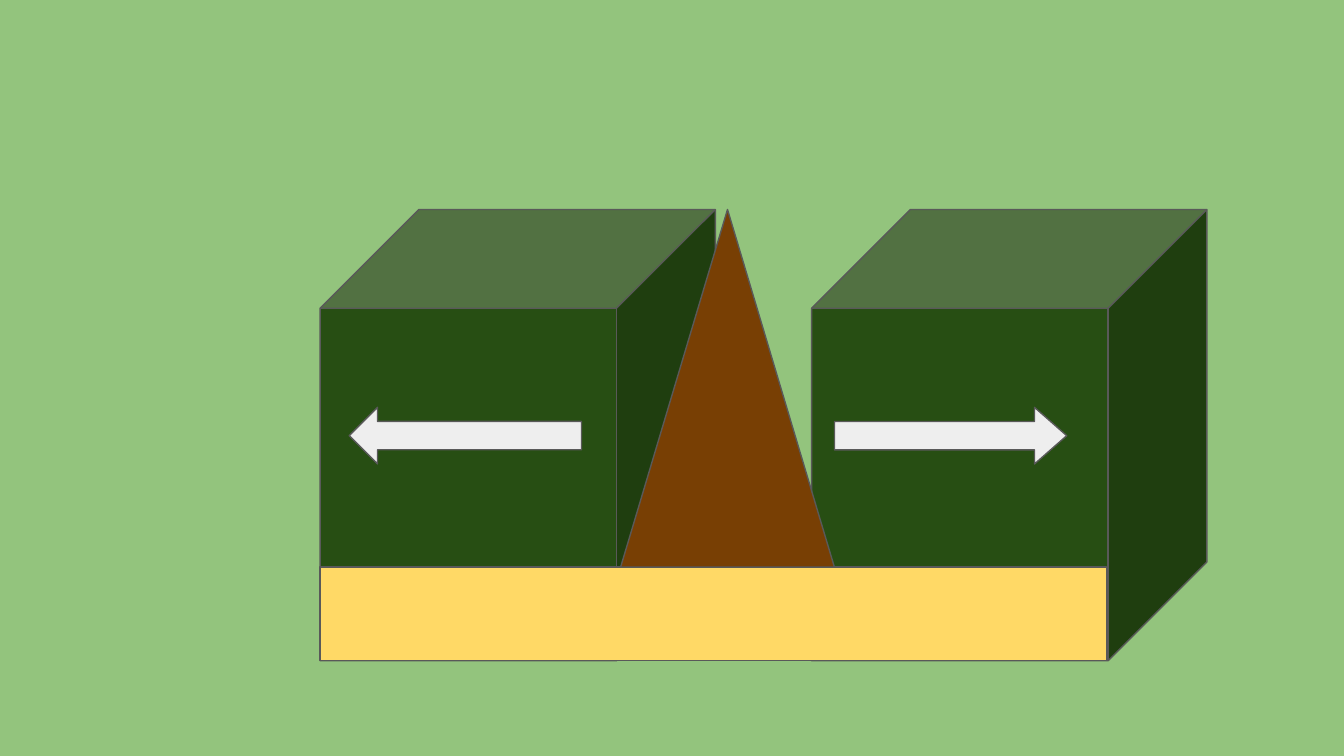
from pptx import Presentation
from pptx.dml.color import RGBColor
from pptx.enum.shapes import MSO_SHAPE as Preset
from pptx.util import Cm, Pt

BACKGROUND = RGBColor(0x93, 0xC4, 0x7D)
BLOCK_GREEN = RGBColor(0x27, 0x4E, 0x13)
ARROW_GREY = RGBColor(0xEE, 0xEE, 0xEE)
BASE_YELLOW = RGBColor(0xFF, 0xD9, 0x66)
WEDGE_BROWN = RGBColor(0x78, 0x3F, 0x04)
OUTLINE = RGBColor(0x59, 0x59, 0x59)

BLOCK_LEFT, BLOCK_TOP = 6.05, 3.96
BLOCK_WIDTH, BLOCK_HEIGHT = 7.47, 8.53
BLOCK_STEP = 9.29
BASE_TOP = 10.72
BASE_WIDTH = 14.86
ARROW_TOP = 7.7


def add_solid(slide, preset, left, top, width, height, color, adjustments=()):
    """Add an outlined preset shape; lengths are in centimetres."""
    shape = slide.shapes.add_shape(preset, Cm(left), Cm(top), Cm(width), Cm(height))
    for index, value in enumerate(adjustments):
        shape.adjustments[index] = value
    shape.shadow.inherit = False
    shape.fill.solid()
    shape.fill.fore_color.rgb = color
    shape.line.color.rgb = OUTLINE
    shape.line.width = Pt(0.75)
    return shape


def add_block(slide, left):
    add_solid(slide, Preset.CUBE, left, BLOCK_TOP, BLOCK_WIDTH, BLOCK_HEIGHT,
              BLOCK_GREEN, [0.25])


def add_arrow(slide, left, head_length, rotation=0):
    arrow = add_solid(slide, Preset.LEFT_ARROW, left, ARROW_TOP, 4.39, 1.07,
                      ARROW_GREY, [0.5, head_length])
    arrow.rotation = rotation


def main():
    presentation = Presentation()
    presentation.slide_width = Cm(25.4)
    presentation.slide_height = Cm(14.29)
    slide = presentation.slides.add_slide(presentation.slide_layouts[6])
    slide.background.fill.solid()
    slide.background.fill.fore_color.rgb = BACKGROUND

    for column in range(2):
        add_block(slide, BLOCK_LEFT + column * BLOCK_STEP)
    add_arrow(slide, 6.6, 0.5)
    add_arrow(slide, 15.77, 0.57, rotation=180)

    base_height = BLOCK_TOP + BLOCK_HEIGHT - BASE_TOP
    add_solid(slide, Preset.FLOWCHART_PROCESS, BLOCK_LEFT, BASE_TOP,
              BASE_WIDTH, base_height, BASE_YELLOW)
    add_solid(slide, Preset.ISOSCELES_TRIANGLE, 11.73, BLOCK_TOP,
              4.04, BASE_TOP - BLOCK_TOP, WEDGE_BROWN, [0.5])

    presentation.save("out.pptx")


if __name__ == "__main__":
    main()
